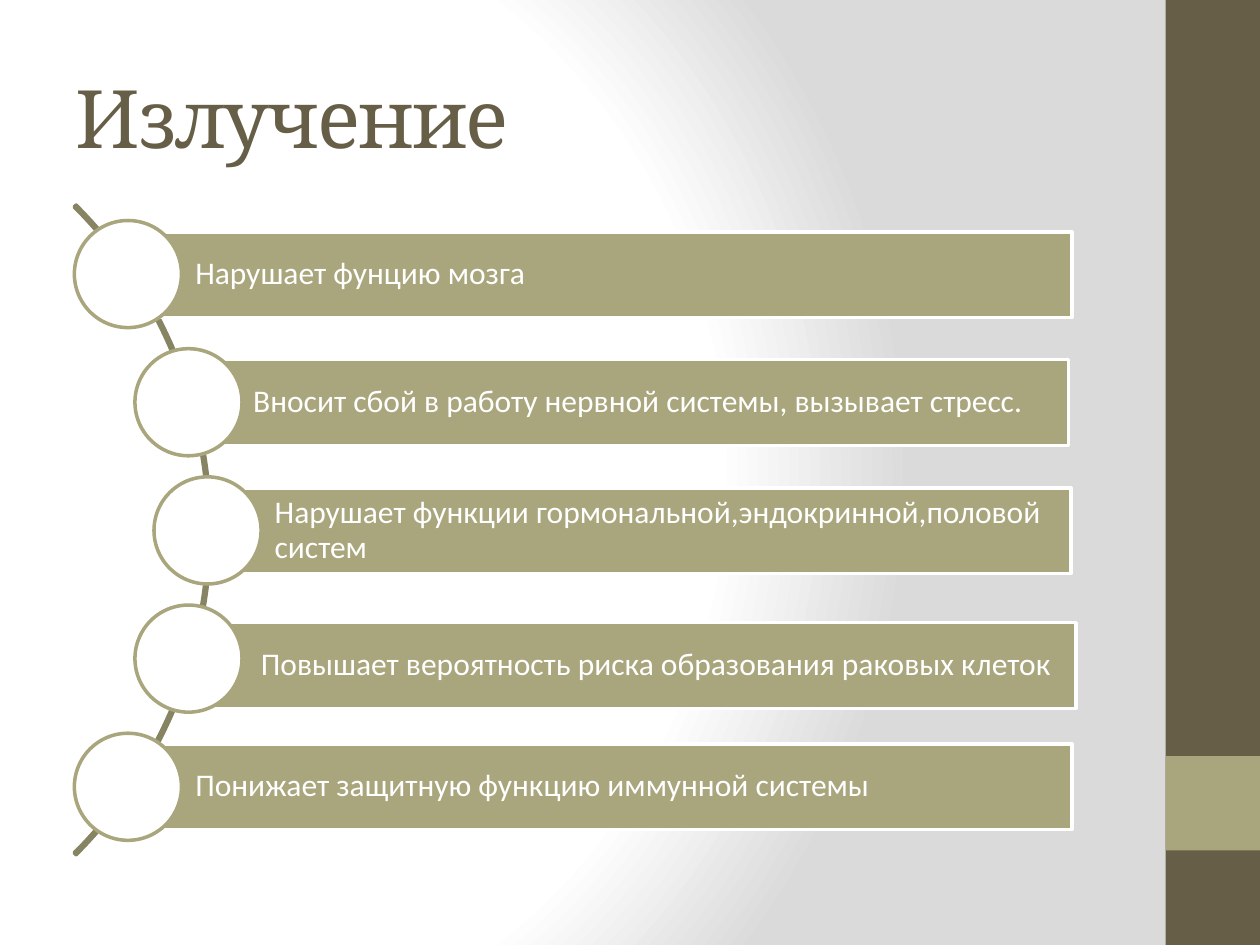
"""Build a slide listing the effects of radiation along an arc."""
from dataclasses import dataclass

from lxml import etree
from pptx import Presentation
from pptx.dml.color import RGBColor
from pptx.enum.shapes import MSO_SHAPE
from pptx.enum.text import MSO_ANCHOR, PP_ALIGN
from pptx.util import Pt

RECTANGLE, OVAL, ARC = MSO_SHAPE.RECTANGLE, MSO_SHAPE.OVAL, MSO_SHAPE.BLOCK_ARC
MIDDLE, LEFT = MSO_ANCHOR.MIDDLE, PP_ALIGN.LEFT
TITLE_ONLY = 5


@dataclass(frozen=True)
class Theme:
    """Colours, fonts and type sizes of the slide."""
    white: str = "FFFFFF"
    grey: str = "DADADA"
    brown: str = "675E47"
    olive: str = "A9A57C"
    dark_olive: str = "878463"
    heading_font: str = "Cambria"
    body_font: str = "Calibri"
    heading_size: int = 46
    body_size: int = 18
    line_width: int = 2


THEME = Theme()
CIRCLE_TOP, CIRCLE_STEP, CIRCLE_SIZE = 126, 73.25, 61.2
BAR_HEIGHT = 49
EFFECTS = [
    ("Нарушает фунцию мозга", 42.5, (72.7, 132.5, 540)),
    ("Вносит сбой в работу нервной системы, вызывает стресс.",
     77.1, (105.8, 205.5, 504.7)),
    ("Нарушает функции гормональной,эндокринной,половой систем",
     88, (118.1, 278.8, 493.9)),
    ("Повышает вероятность риска образования раковых клеток",
     77.1, (110.2, 355.8, 504.7)),
    ("Понижает защитную функцию иммунной системы",
     42.5, (72.7, 425, 540)),
]


def set_background(page):
    """Give the page a circular gradient from white to grey."""
    stops = "".join(
        f'<a:gs pos="{place * 1000}"><a:srgbClr val="{color}"/></a:gs>'
        for place, color in ((0, THEME.white), (75, THEME.white), (100, THEME.grey)))
    background = etree.fromstring(
        '<p:bg xmlns:p="http://schemas.openxmlformats.org/presentationml/2006/main"'
        ' xmlns:a="http://schemas.openxmlformats.org/drawingml/2006/main">'
        f'<p:bgPr><a:gradFill rotWithShape="1"><a:gsLst>{stops}</a:gsLst>'
        '<a:path path="circle"><a:fillToRect l="20000" t="50000" r="100000" b="50000"/>'
        '</a:path></a:gradFill><a:effectLst/></p:bgPr></p:bg>')
    page.element.cSld.insert(0, background)


def add_shape(shapes, kind, left, top, width, height, fill=None, line=None):
    """Add a flat preset shape with an optional fill and outline."""
    shape = shapes.add_shape(kind, Pt(left), Pt(top), Pt(width), Pt(height))
    shape.shadow.inherit = False
    if fill:
        shape.fill.solid()
        shape.fill.fore_color.rgb = RGBColor.from_string(fill)
    else:
        shape.fill.background()
    if line:
        shape.line.color.rgb = RGBColor.from_string(line)
        shape.line.width = Pt(THEME.line_width)
    else:
        shape.line.fill.background()
    return shape


def write_text(shape, text, font, size, color):
    """Set one left-aligned, vertically centred paragraph."""
    frame = shape.text_frame
    frame.text = text
    frame.word_wrap = True
    frame.vertical_anchor = MIDDLE
    para = frame.paragraphs[0]
    para.alignment = LEFT
    span = para.runs[0]
    span.font.name = font
    span.font.size = Pt(size)
    span.font.color.rgb = RGBColor.from_string(color)
    return para


def add_title(page, text):
    """Place and format the title placeholder."""
    title = page.shapes.title
    title.left, title.top, title.width, title.height = Pt(36), Pt(21.6), Pt(600), Pt(90)
    para = write_text(title, text, THEME.heading_font, THEME.heading_size, THEME.brown)
    para.runs[0].font._element.set("spc", "-100")


def add_side_band(page):
    """Draw the band on the right with its lighter square."""
    add_shape(page.shapes, RECTANGLE, 666, 0, 54, 540, THEME.brown)
    add_shape(page.shapes, RECTANGLE, 666, 432, 54, 54, THEME.olive)


def add_arc(shapes):
    """Draw the thin arc that links the circles."""
    arc = add_shape(shapes, ARC, -404.6, 40.3, 525, 525, line=THEME.dark_olive)
    for index, value in enumerate((189, 27, 0.003)):
        arc.adjustments[index] = value


def add_effect(shapes, index, text, circle_left, bar_place):
    """Draw one labelled bar and the circle at its left end."""
    bar = add_shape(shapes, RECTANGLE, *bar_place, BAR_HEIGHT, THEME.olive, THEME.white)
    para = write_text(bar, text, THEME.body_font, THEME.body_size, THEME.white)
    para.line_spacing = 0.9
    frame = bar.text_frame
    frame.margin_left = Pt(38.9)
    frame.margin_top = frame.margin_right = frame.margin_bottom = Pt(3.6)
    add_shape(shapes, OVAL, circle_left, CIRCLE_TOP + index * CIRCLE_STEP,
              CIRCLE_SIZE, CIRCLE_SIZE, THEME.white, THEME.olive)


def main():
    """Build and save the deck."""
    deck = Presentation()
    deck.slide_width, deck.slide_height = Pt(720), Pt(540)
    page = deck.slides.add_slide(deck.slide_layouts[TITLE_ONLY])
    set_background(page)
    add_side_band(page)
    add_title(page, "Излучение")
    diagram = page.shapes.add_group_shape()
    add_arc(diagram.shapes)
    for index, effect in enumerate(EFFECTS):
        add_effect(diagram.shapes, index, *effect)
    deck.save("out.pptx")


if __name__ == "__main__":
    main()
